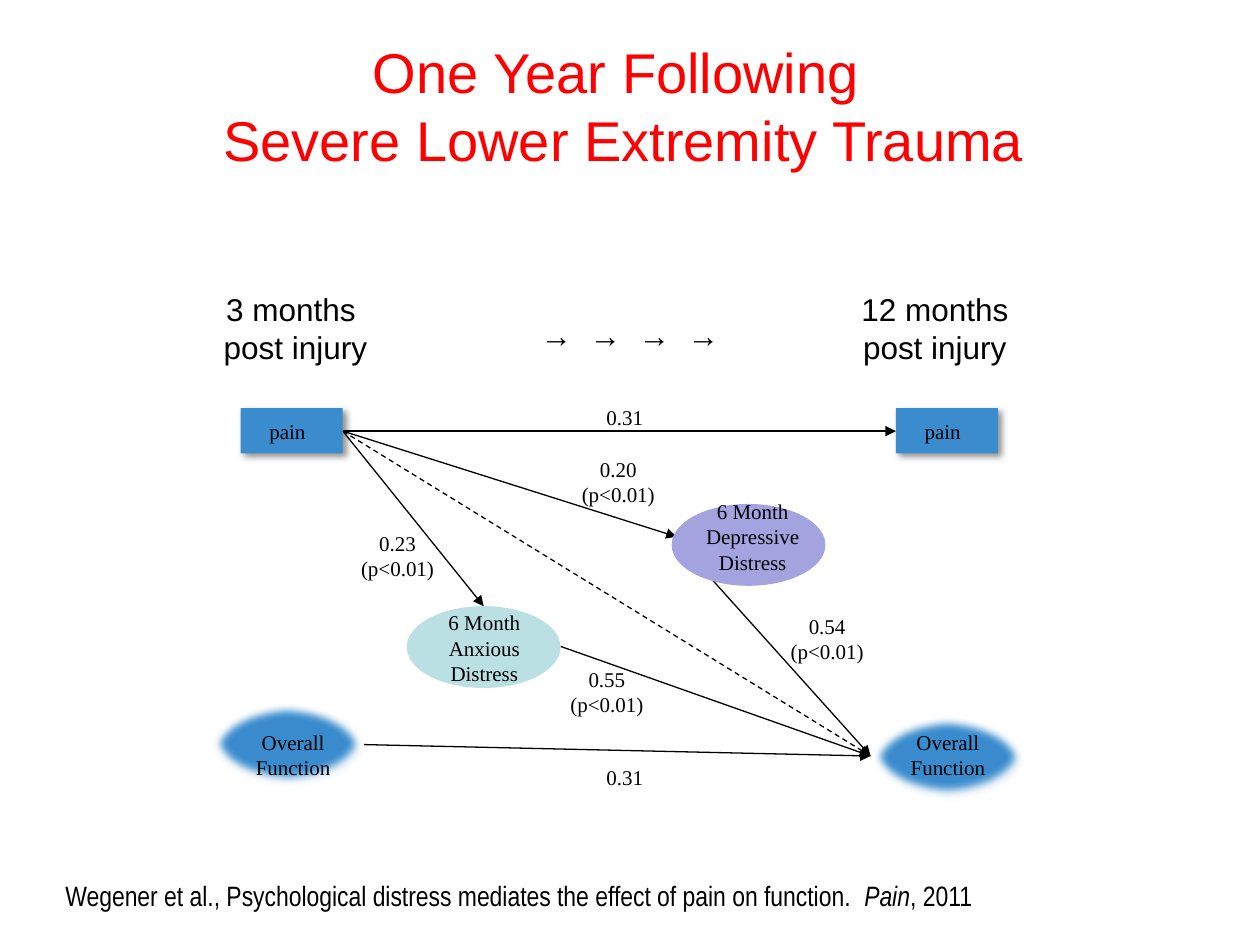
from dataclasses import dataclass

from lxml import etree
from pptx import Presentation
from pptx.dml.color import RGBColor
from pptx.enum.dml import MSO_LINE
from pptx.enum.shapes import MSO_CONNECTOR, MSO_SHAPE
from pptx.enum.text import MSO_AUTO_SIZE, PP_ALIGN
from pptx.oxml import parse_xml
from pptx.oxml.ns import nsdecls, qn
from pptx.util import Cm, Pt

BLACK = RGBColor(0x00, 0x00, 0x00)
RED = RGBColor(0xFF, 0x00, 0x00)
BLUE = RGBColor(0x3A, 0x8C, 0xCE)
TEAL = RGBColor(0xBB, 0xE0, 0xE3)
LILAC = RGBColor(0xA3, 0xA3, 0xE0)

SERIF, SANS, NARROW = "Times New Roman", "Arial", "Arial Narrow"
ELLIPSE, RECT = MSO_SHAPE.OVAL, MSO_SHAPE.RECTANGLE
OVAL_SIZE = (3.1, 1.65)
PAIN_SIZE = (2.06, 0.91)

Point = tuple[float, float]


@dataclass
class Label:
    x: float
    y: float
    w: float
    h: float
    lines: list[str]
    size: int = 12
    font: str = SERIF
    color: RGBColor = BLACK
    align: PP_ALIGN = PP_ALIGN.CENTER
    wrap: bool = False
    italic: str = ""


@dataclass
class Node:
    kind: MSO_SHAPE
    at: Point
    size: Point
    fill: RGBColor
    label: Label
    shadow: RGBColor | None = None
    soft: bool = False


@dataclass
class Arrow:
    start: Point
    end: Point
    dashed: bool = False


def coefficient(x: float, y: float, value: str) -> Label:
    return Label(x, y, 2.01, 1.27, [value, "(p<0.01)"])


def pain_node(x: float) -> Node:
    label = Label(x + 0.33, 8.31, 1.4, 0.76, ["pain"],
                  align=PP_ALIGN.LEFT, wrap=True)
    return Node(RECT, (x, 8.23), PAIN_SIZE, BLUE, label, BLACK)


def function_node(x: float, y: float, text_x: float) -> Node:
    label = Label(text_x, 14.58, 2.06, 1.27, ["Overall", "Function"])
    return Node(ELLIPSE, (x, y), OVAL_SIZE, BLUE, label, BLUE, soft=True)


PAIN_OUT, PAIN_IN, FUNCTION_IN = (6.91, 8.69), (18.06, 8.69), (17.55, 15.24)

ARROWS = [
    Arrow((11.3, 13.03), FUNCTION_IN),
    Arrow((14.1, 11.4), FUNCTION_IN),
    Arrow((7.34, 15.01), FUNCTION_IN),
    Arrow(PAIN_OUT, FUNCTION_IN, dashed=True),
    Arrow(PAIN_OUT, PAIN_IN),
    Arrow(PAIN_OUT, (9.75, 12.22)),
    Arrow(PAIN_OUT, (13.64, 10.82)),
]

NODES = [
    function_node(4.24, 14.17, 4.88),
    function_node(17.55, 14.43, 18.08),
    pain_node(4.85),
    pain_node(18.06),
    Node(ELLIPSE, (8.2, 12.22), OVAL_SIZE, TEAL,
         Label(8.76, 12.17, 2.01, 1.8, ["6 Month", "Anxious", "Distress"])),
    Node(ELLIPSE, (13.54, 10.16), OVAL_SIZE, LILAC,
         Label(13.97, 9.93, 2.41, 1.8, ["6 Month", "Depressive", "Distress"])),
]

LABELS = [
    Label(11.96, 8.03, 1.27, 0.76, ["0.31"]),
    Label(11.96, 15.29, 1.27, 0.76, ["0.31"]),
    coefficient(15.67, 12.24, "0.54"),
    coefficient(11.23, 13.31, "0.55"),
    coefficient(11.46, 9.07, "0.20"),
    coefficient(7.01, 10.57, "0.23"),
    Label(4.24, 5.72, 3.43, 1.8, ["3 months ", "post injury"], 18, SANS),
    Label(17.09, 5.72, 3.51, 1.8, ["12 months ", "post injury"], 18, SANS),
    Label(9.5, 6.25, 6.4, 1.02, ["→  →  →  →"], 18, SANS, wrap=True),
    Label(1.07, 17.58, 24.33, 0.94,
          ["Wegener et al., Psychological distress mediates the effect of "
           "pain on function.  Pain, 2011"],
          16, NARROW, align=PP_ALIGN.LEFT, wrap=True, italic="Pain"),
    Label(3.86, 0.64, 17.12, 3,
          ["One Year Following", " Severe Lower Extremity Trauma"],
          32, SANS, RED),
]


def split_runs(line: str, italic: str) -> list[tuple[str, bool]]:
    """Cut a line into (text, is_italic) parts around the italic word."""
    if not italic:
        return [(line, False)]
    before, word, after = line.partition(italic)
    return [(before, False), (word, True), (after, False)]


def add_label(s, label: Label) -> None:
    sp = s.shapes.add_textbox(Cm(label.x), Cm(label.y), Cm(label.w), Cm(label.h))
    tf = sp.text_frame
    tf.word_wrap = label.wrap
    tf.auto_size = MSO_AUTO_SIZE.SHAPE_TO_FIT_TEXT
    for i, line in enumerate(label.lines):
        p = tf.add_paragraph() if i else tf.paragraphs[0]
        p.alignment = label.align
        for text, is_italic in split_runs(line, label.italic):
            r = p.add_run()
            r.text = text
            r.font.size = Pt(label.size)
            r.font.name = label.font
            r.font.italic = is_italic
            r.font.color.rgb = label.color


def add_effects(sp, color: RGBColor, soft: bool) -> None:
    """Give a shape a lower-right shadow and, if asked, blurred edges."""
    effects = sp._element.spPr.find(qn("a:effectLst"))
    effects.append(parse_xml(
        f'<a:outerShdw {nsdecls("a")} blurRad="{Pt(4)}" dist="{Pt(3)}" '
        f'dir="2700000" algn="tl" rotWithShape="0"><a:srgbClr val="{color}">'
        '<a:alpha val="43000"/></a:srgbClr></a:outerShdw>'))
    if soft:
        etree.SubElement(effects, qn("a:softEdge"), rad=str(Pt(5)))


def add_node(s, node: Node) -> None:
    sp = s.shapes.add_shape(node.kind, *map(Cm, node.at + node.size))
    sp.shadow.inherit = False
    sp.fill.solid()
    sp.fill.fore_color.rgb = node.fill
    sp.line.fill.background()
    if node.shadow is not None:
        add_effects(sp, node.shadow, node.soft)
    add_label(s, node.label)


def add_arrow(s, arrow: Arrow) -> None:
    line = s.shapes.add_connector(MSO_CONNECTOR.STRAIGHT,
                                  *map(Cm, arrow.start + arrow.end))
    line.line.color.rgb = BLACK
    line.line.width = Pt(0.75)
    if arrow.dashed:
        line.line.dash_style = MSO_LINE.DASH
    etree.SubElement(line.line._get_or_add_ln(), qn("a:tailEnd"), type="triangle")
    etree.SubElement(line._element.spPr, qn("a:effectLst"))


def main() -> None:
    prs = Presentation()
    prs.slide_width, prs.slide_height = Cm(25.4), Cm(19.05)
    s = prs.slides.add_slide(prs.slide_layouts[6])
    for arrow in ARROWS:
        add_arrow(s, arrow)
    for label in LABELS:
        add_label(s, label)
    for node in NODES:
        add_node(s, node)
    prs.save("out.pptx")


if __name__ == "__main__":
    main()
